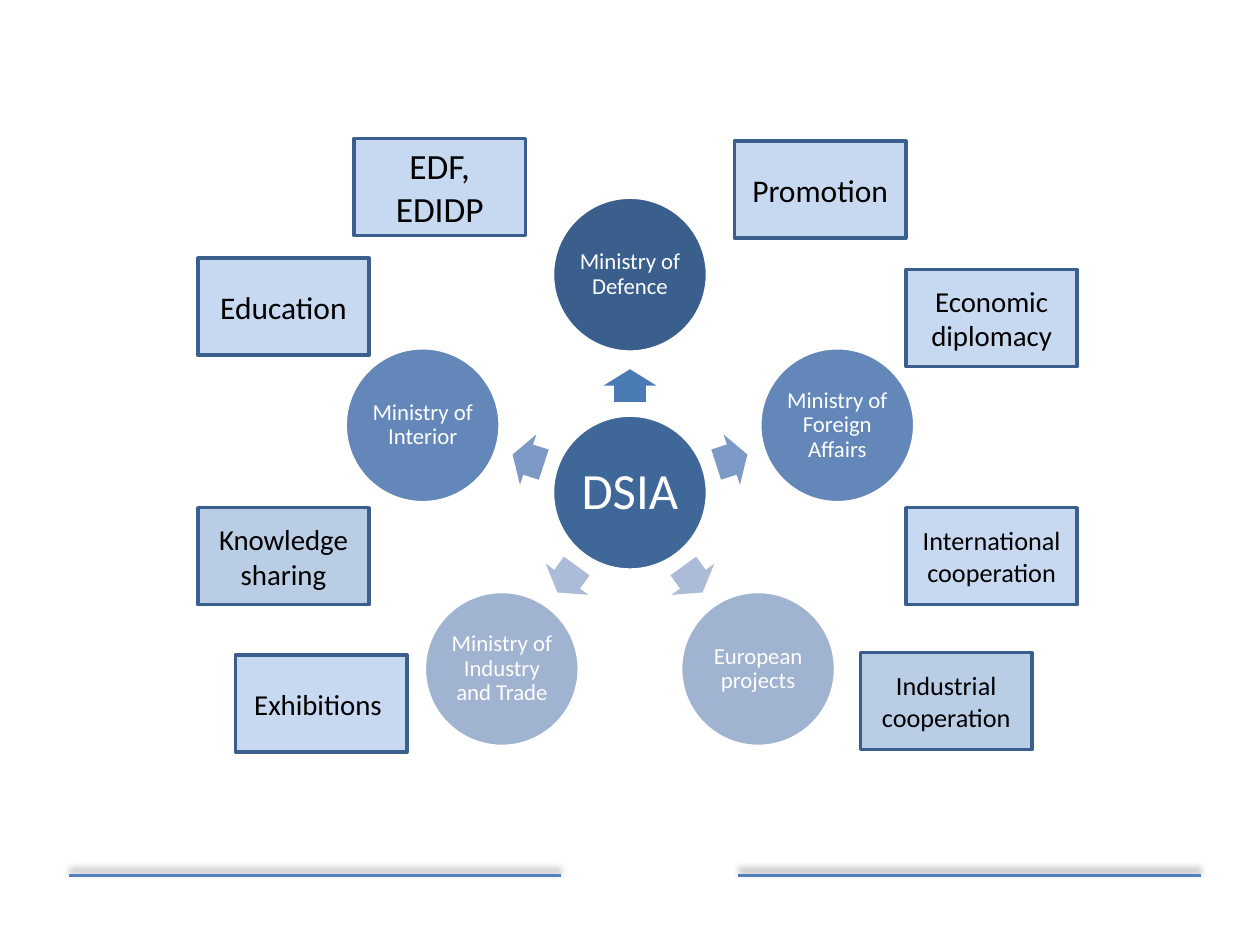
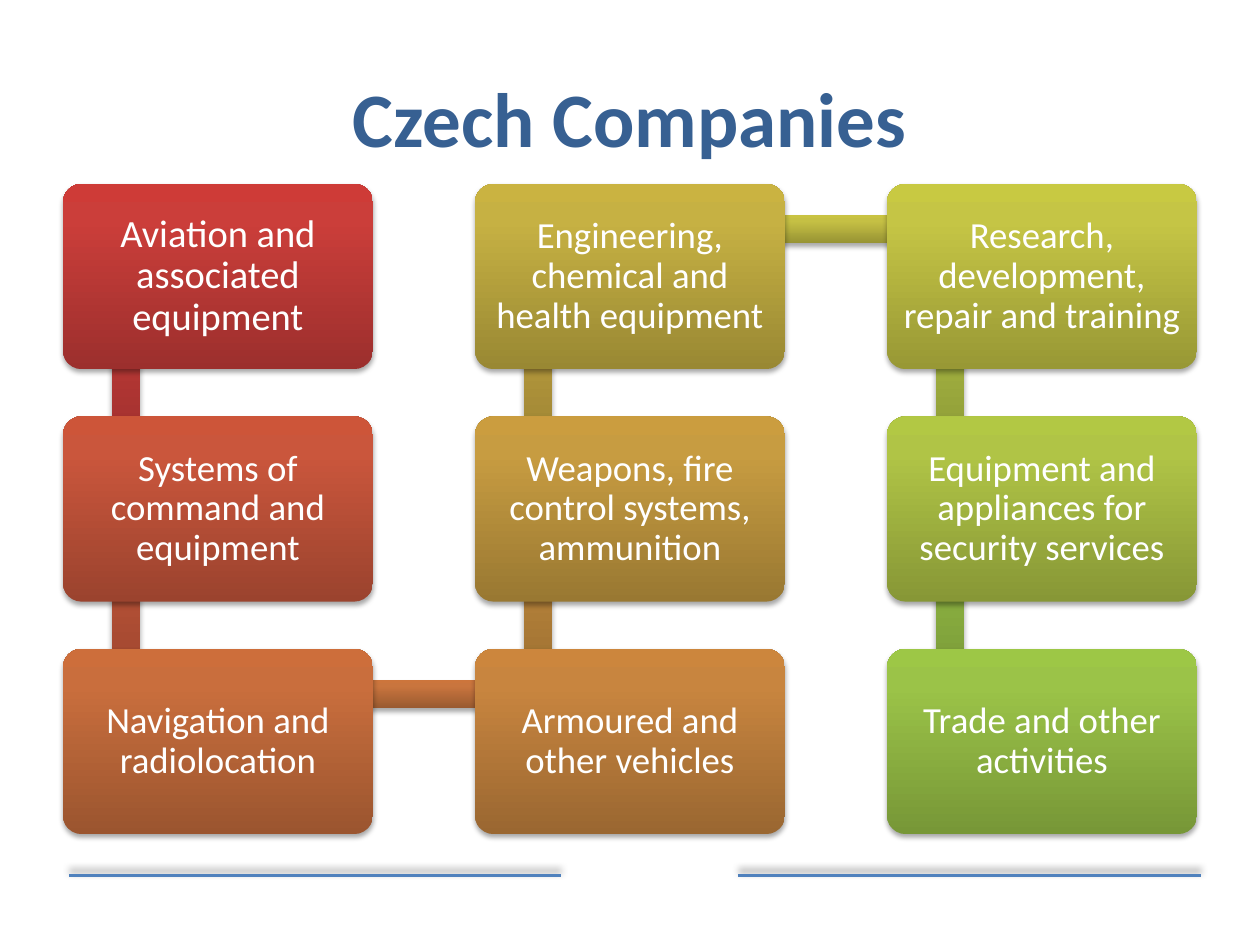
import math
from lxml import etree
from pptx import Presentation
from pptx import util as u
from pptx.dml.color import RGBColor
from pptx.enum import shapes, text
from pptx.oxml import ns

COLOURS = {
    "white": "FFFFFF", "black": "000000", "title": "376092", "rule": "4F81BD",
    "hub": "3F6797", "border": "3A5F8C", "pale": "C6D9F1", "mid": "B9CDE5",
}
FONT = "Calibri"

FOOTER_RULES = [(0.55, 4.45), (5.86, 9.53)]
FOOTER_Y = 6.95
FOOTER_SHADOW = dict(alpha=40, blur=4, distance=3, direction=270)
CARD_SHADOW = dict(alpha=35, blur=3.1, distance=1.8, direction=90)

HUB = "DSIA"
PARTNERS = [
    ("Ministry of Defence", "3A5F8C", "4B7BB5"),
    ("Ministry of Foreign Affairs", "6387B9", "7C9AC5"),
    ("European projects", "A0B3D1", "ACBCD8"),
    ("Ministry of Industry and Trade", "A0B3D1", "ACBCD8"),
    ("Ministry of Interior", "6387B9", "7C9AC5"),
]
HUB_X, HUB_Y, CIRCLE = 5, 3.91, 1.23
PARTNER_RADIUS, ARROW_RADIUS = 1.73, 0.85
ARROW_W, ARROW_H = 0.26, 0.42

TOPICS = [
    ("Industrial cooperation", 6.83, 5.18, 15, "mid"),
    ("Exhibitions ", 1.87, 5.2, 16.5, "pale"),
    ("Economic diplomacy", 7.19, 2.14, 16.5, "pale"),
    ("Education", 1.57, 2.05, 18, "pale"),
    ("EDF, EDIDP", 2.81, 1.1, 20.2, "pale"),
    ("Promotion", 5.83, 1.12, 18, "pale"),
    ("Knowledge sharing", 1.57, 4.03, 16.5, "mid"),
    ("International cooperation", 7.19, 4.03, 15, "pale"),
]
TOPIC_W, TOPIC_H = 1.36, 0.77

TITLE = "Czech Companies"
SECTORS = [
    ("Aviation and associated equipment", 22, ("9C2F2D", "CB3E3A", "CE3B37")),
    ("Systems of command and equipment", 21, ("9B432E", "CA563C", "CD5539")),
    ("Navigation and radiolocation", 21, ("9B552F", "C96E3D", "CD6E3B")),
    ("Armoured and other vehicles", 21, ("9A6731", "C8853F", "CC863D")),
    ("Weapons, fire control systems, ammunition", 21, ("997832", "C79C41", "CB9D3F")),
    ("Engineering, chemical and health equipment", 21, ("998833", "C6B143", "CAB341")),
    ("Research, development, repair and training", 21, ("989835", "C5C545", "C8C942")),
    ("Equipment and appliances for security services", 21, ("879736", "B0C446", "B2C844")),
    ("Trade and other activities", 21, ("779737", "9BC348", "9DC746")),
]
LINKS = [
    ("9C2F2D", "CB3E3A", "CE3B37"), ("9B452E", "CA5A3C", "CD5939"),
    ("9A5A30", "C9753E", "CC753C"), ("9A6E31", "C88F40", "CB903E"),
    ("998133", "C7A842", "CAAA40"), ("989434", "C5C044", "C9C342"),
    ("8A9736", "B3C446", "B5C844"), ("779737", "9BC348", "9DC746"),
]
GRADIENT_STOPS = (0, 80, 100)
ROWS = 3
CARD_W, CARD_H = 2.46, 1.47
GRID_X, GRID_Y, COLUMN_STEP = 0.5, 1.46, 3.27
ROW_STEP = (5.15 - GRID_Y) / (ROWS - 1)
LINK_THICK, LINK_DOWN, LINK_ACROSS = 0.22, 1.83, 3.26


def rgb(colour):
    return RGBColor.from_string(COLOURS.get(colour, colour))


def add_shadow(item, alpha, blur, distance, direction):
    properties = item._element.spPr
    effects = properties.find(ns.qn("a:effectLst"))
    if effects is None:
        effects = etree.SubElement(properties, ns.qn("a:effectLst"))
    outer = etree.SubElement(
        effects, ns.qn("a:outerShdw"), blurRad=str(u.Pt(blur)), dist=str(u.Pt(distance)),
        dir=str(direction * 60000), rotWithShape="0")
    colour = etree.SubElement(outer, ns.qn("a:srgbClr"), val=COLOURS["black"])
    etree.SubElement(colour, ns.qn("a:alpha"), val=str(alpha * 1000))


def add_block(slide, preset, x, y, w, h, fill=None, border=None):
    block = slide.shapes.add_shape(preset, *map(u.Inches, (x, y, w, h)))
    block.shadow.inherit = False
    if fill:
        block.fill.solid()
        block.fill.fore_color.rgb = rgb(fill)
    if border:
        block.line.color.rgb = rgb(border)
        block.line.width = u.Pt(2)
    else:
        block.line.fill.background()
    return block


def write(block, words, size, colour, inset=None, spacing=None, bold=False):
    frame = block.text_frame
    frame.word_wrap = True
    frame.vertical_anchor = text.MSO_ANCHOR.MIDDLE
    if inset is not None:
        frame.margin_left = frame.margin_right = u.Inches(inset)
        frame.margin_top = frame.margin_bottom = u.Inches(inset)
    frame.text = words
    paragraph = frame.paragraphs[0]
    paragraph.alignment = text.PP_ALIGN.CENTER
    if spacing:
        paragraph.line_spacing = spacing
    font = paragraph.runs[0].font
    font.name, font.size, font.bold = FONT, u.Pt(size), bold
    font.color.rgb = rgb(colour)


def add_gradient_block(slide, preset, x, y, w, h, colours):
    block = add_block(slide, preset, x, y, w, h)
    block.fill.gradient()
    block.fill.gradient_angle = 90
    stops = block._element.spPr.find(".//" + ns.qn("a:gsLst"))
    stops.clear()
    for position, colour in zip(GRADIENT_STOPS, colours):
        stop = etree.SubElement(stops, ns.qn("a:gs"), pos=str(position * 1000))
        etree.SubElement(stop, ns.qn("a:srgbClr"), val=colour)
    add_shadow(block, **CARD_SHADOW)
    return block


def add_slide(deck):
    slide = deck.slides.add_slide(deck.slide_layouts[6])
    for start, end in FOOTER_RULES:
        rule = slide.shapes.add_connector(
            shapes.MSO_CONNECTOR.STRAIGHT, *map(u.Inches, (start, FOOTER_Y, end, FOOTER_Y)))
        rule.line.color.rgb = rgb("rule")
        rule.line.width = u.Pt(2)
        add_shadow(rule, **FOOTER_SHADOW)
    return slide


def add_circle(slide, words, x, y, fill, size, inset):
    circle = add_block(slide, shapes.MSO_SHAPE.OVAL, x - CIRCLE / 2, y - CIRCLE / 2,
                       CIRCLE, CIRCLE, fill, "white")
    write(circle, words, size, "white", inset, 0.9)


def build_partners(deck):
    slide = add_slide(deck)
    add_circle(slide, HUB, HUB_X, HUB_Y, "hub", 29, 0.04)
    for index, (partner, fill, arrow_fill) in enumerate(PARTNERS):
        degrees = (270 + index * 360 / len(PARTNERS)) % 360
        across, down = math.cos(math.radians(degrees)), math.sin(math.radians(degrees))
        arrow = add_block(
            slide, shapes.MSO_SHAPE.RIGHT_ARROW,
            HUB_X + ARROW_RADIUS * across - ARROW_W / 2,
            HUB_Y + ARROW_RADIUS * down - ARROW_H / 2, ARROW_W, ARROW_H, arrow_fill)
        arrow.adjustments[0] = 0.6
        arrow.adjustments[1] = 0.5
        arrow.rotation = degrees
        add_circle(slide, partner, HUB_X + PARTNER_RADIUS * across,
                   HUB_Y + PARTNER_RADIUS * down, fill, 13, 0.02)
    for topic, x, y, size, fill in TOPICS:
        box = add_block(slide, shapes.MSO_SHAPE.RECTANGLE, x, y, TOPIC_W, TOPIC_H,
                        fill, "border")
        write(box, topic, size, "black")


def card_place(index):
    column, step = divmod(index, ROWS)
    row = ROWS - 1 - step if column % 2 else step
    return GRID_X + column * COLUMN_STEP, GRID_Y + row * ROW_STEP


def build_companies(deck):
    slide = add_slide(deck)
    title = slide.shapes.add_textbox(*map(u.Inches, (0.5, 0.3, 9, 1.25)))
    write(title, TITLE, 44, "title", bold=True)
    for index, (sector, size, colours) in enumerate(SECTORS):
        x, y = card_place(index)
        if index < len(LINKS):
            next_x, next_y = card_place(index + 1)
            if next_x == x:
                place = x + 0.39, min(y, next_y) + 0.37, LINK_THICK, LINK_DOWN
            else:
                place = x + 0.51, y + 0.25, LINK_ACROSS, LINK_THICK
            add_gradient_block(slide, shapes.MSO_SHAPE.RECTANGLE, *place, LINKS[index])
        card = add_gradient_block(slide, shapes.MSO_SHAPE.ROUNDED_RECTANGLE,
                                  x, y, CARD_W, CARD_H, colours)
        card.adjustments[0] = 0.1
        write(card, sector, size, "white", 0.09, 0.9)


def main():
    deck = Presentation()
    deck.slide_width, deck.slide_height = u.Inches(10), u.Inches(7.5)
    build_partners(deck)
    build_companies(deck)
    deck.save("out.pptx")


if __name__ == "__main__":
    main()
